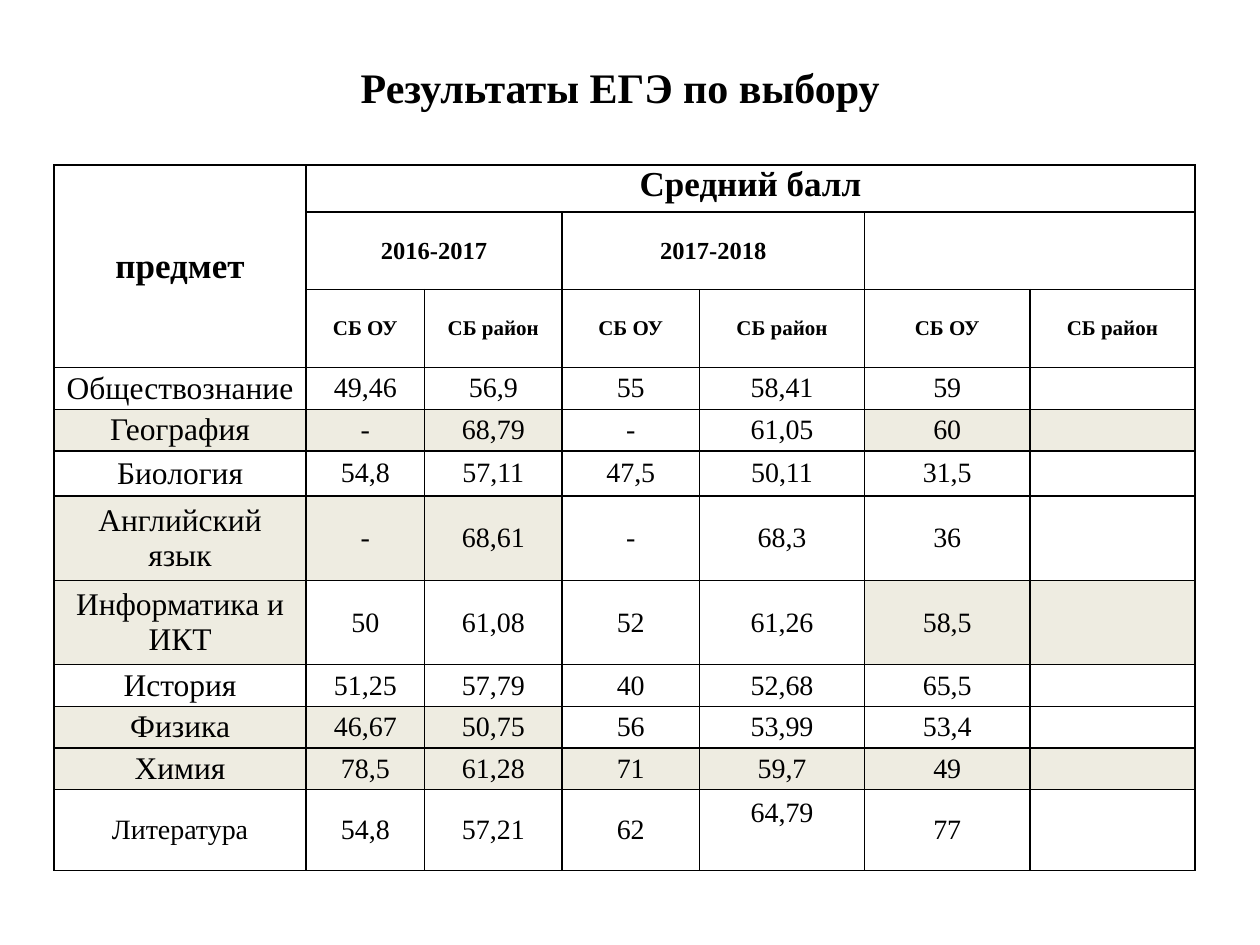
import dataclasses

import lxml.etree
import pptx
import pptx.dml.color
import pptx.enum.text
import pptx.oxml.ns
import pptx.util

Cm = pptx.util.Cm
Pt = pptx.util.Pt
Anchor = pptx.enum.text.MSO_ANCHOR
Align = pptx.enum.text.PP_ALIGN


@dataclasses.dataclass(frozen=True)
class Theme:
    font: str = "Times New Roman"
    ink: str = "000000"
    shade: str = "EEECE1"
    title: int = 24
    head: int = 20
    year: int = 14
    label: int = 12
    name: int = 18
    mark: int = 16
    line: int = 1


THEME = Theme()
COLS = [5.08, 2.39, 2.77, 2.77, 3.33, 3.33, 3.33]
ROWS = [0.94, 1.57, 1.57, 0.84, 0.84, 0.91, 1.7, 1.7, 0.84, 0.84, 0.84, 1.63]
CELL = {
    "margin_left": Cm(0.18),
    "margin_right": Cm(0.18),
    "margin_top": 0,
    "margin_bottom": 0,
    "vertical_anchor": Anchor.MIDDLE,
}
PLAIN = {"first_row": False, "horz_banding": False}
FRAME = {
    "word_wrap": True,
    "vertical_anchor": Anchor.MIDDLE,
    "margin_bottom": Cm(0.83),
}
SPANS = [(0, 0, 2, 0), (0, 1, 0, 6), (1, 1, 1, 2), (1, 3, 1, 4), (1, 5, 1, 6)]
HEADS = [
    (0, 0, "предмет", THEME.head),
    (0, 1, "Средний балл", THEME.head),
    (1, 1, "2016-2017", THEME.year),
    (1, 3, "2017-2018", THEME.year),
]
MARKS = [
    ("Обществознание", "49,46 56,9 55 58,41 59", ()),
    ("География", "- 68,79 - 61,05 60", (0, 1, 2, 5, 6)),
    ("Биология", "54,8 57,11 47,5 50,11 31,5", ()),
    ("Английский язык", "- 68,61 - 68,3 36", (0, 1, 2)),
    ("Информатика и ИКТ", "50 61,08 52 61,26 58,5", (0, 5, 6)),
    ("История", "51,25 57,79 40 52,68 65,5", ()),
    ("Физика", "46,67 50,75 56 53,99 53,4", (0, 1, 2)),
    ("Химия", "78,5 61,28 71 59,7 49", range(7)),
    ("Литература", "54,8 57,21 62 64,79 77", ()),
]


def apply(item, values):
    for key, value in values.items():
        setattr(item, key, value)


def color(code):
    return pptx.dml.color.RGBColor.from_string(code)


def write(frame, text, size, bold=False):
    para = frame.paragraphs[0]
    para.alignment = Align.CENTER
    run = para.add_run()
    run.text = text
    apply(run.font, {"name": THEME.font, "size": Pt(size), "bold": bold})
    run.font.color.rgb = color(THEME.ink)


def rule(cell):
    props = cell._tc.get_or_add_tcPr()
    name = pptx.oxml.ns.qn
    for side in ("a:lnL", "a:lnR", "a:lnT", "a:lnB"):
        line = lxml.etree.SubElement(props, name(side), w=str(Pt(THEME.line)))
        fill = lxml.etree.SubElement(line, name("a:solidFill"))
        lxml.etree.SubElement(fill, name("a:srgbClr"), val=THEME.ink)


def add_title(slide):
    box = slide.shapes.add_textbox(Cm(5.51), Cm(1.07), Cm(14.2), Cm(2.06))
    apply(box.text_frame, FRAME)
    write(box.text_frame, "Результаты ЕГЭ по выбору ", THEME.title, True)


def add_grid(slide):
    table = slide.shapes.add_table(
        len(ROWS), len(COLS), Cm(1.09), Cm(3.33), Cm(sum(COLS)), Cm(sum(ROWS))
    ).table
    apply(table, PLAIN)
    for col, width in zip(table.columns, COLS):
        col.width = Cm(width)
    for row, height in zip(table.rows, ROWS):
        row.height = Cm(height)
    for cell in table.iter_cells():
        apply(cell, CELL)
        rule(cell)
        cell.fill.background()
    for top, left, low, right in SPANS:
        table.cell(top, left).merge(table.cell(low, right))
    return table


def fill_heads(table):
    for row, col, text, size in HEADS:
        write(table.cell(row, col).text_frame, text, size, True)
    table.cell(0, 1).vertical_anchor = Anchor.TOP
    for col in range(1, len(COLS)):
        text = "СБ ОУ" if col % 2 else "СБ район"
        write(table.cell(2, col).text_frame, text, THEME.label, True)


def fill_marks(table):
    for row, (name, marks, shades) in enumerate(MARKS, 3):
        size = THEME.mark if name == "Литература" else THEME.name
        write(table.cell(row, 0).text_frame, name, size)
        for col, mark in enumerate(marks.split(), 1):
            write(table.cell(row, col).text_frame, mark, THEME.mark)
        for col in shades:
            fill = table.cell(row, col).fill
            fill.solid()
            fill.fore_color.rgb = color(THEME.shade)
    table.cell(len(ROWS) - 1, 4).margin_bottom = Cm(0.69)


def main():
    deck = pptx.Presentation()
    apply(deck, {"slide_width": Cm(25.4), "slide_height": Cm(19.05)})
    slide = deck.slides.add_slide(deck.slide_layouts[6])
    table = add_grid(slide)
    fill_heads(table)
    fill_marks(table)
    add_title(slide)
    deck.save("out.pptx")


if __name__ == "__main__":
    main()
